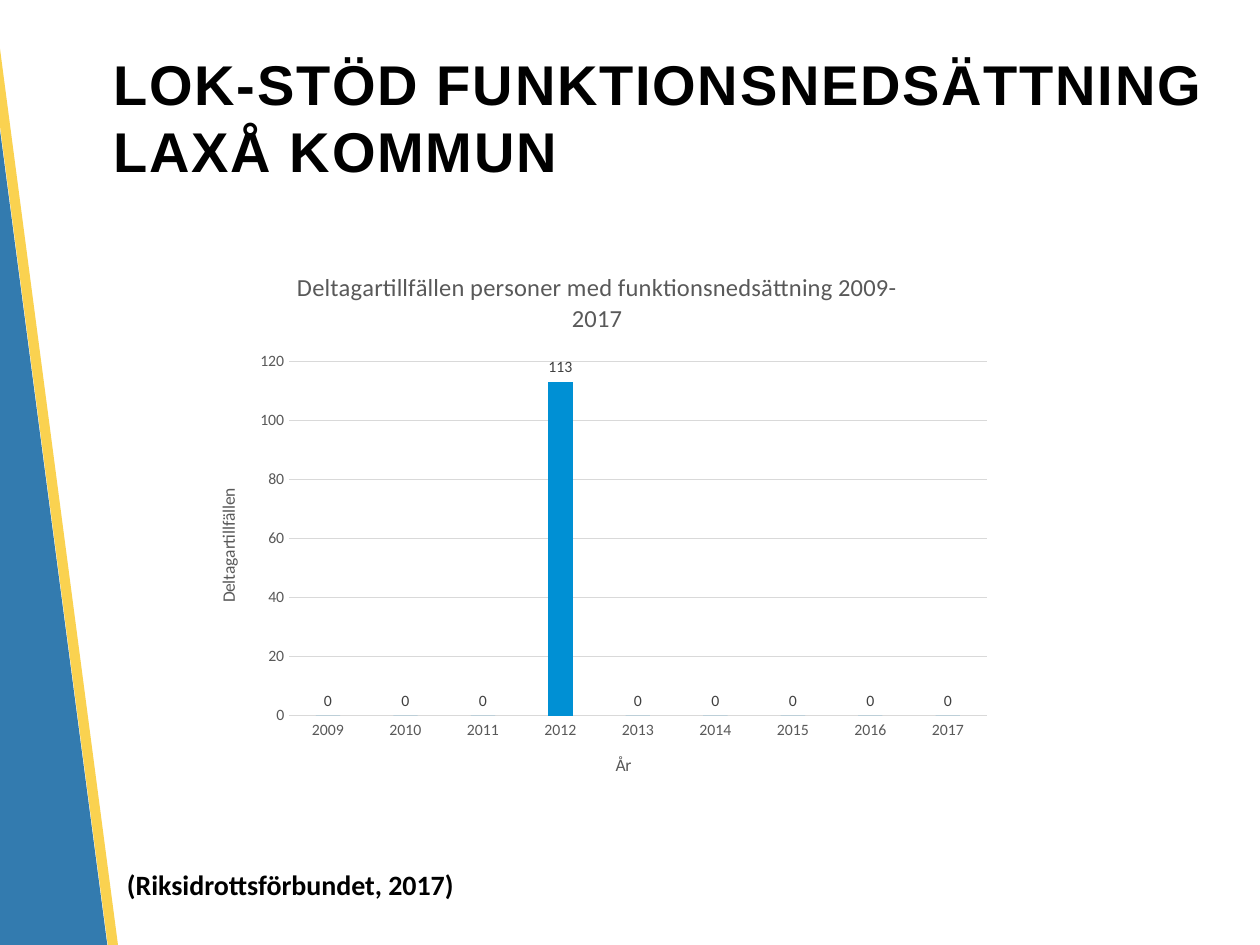
from dataclasses import dataclass

from lxml.etree import SubElement
from pptx import Presentation
from pptx.chart.data import CategoryChartData
from pptx.dml.color import RGBColor as Color
from pptx.enum.chart import XL_CHART_TYPE as ChartType
from pptx.enum.chart import XL_LABEL_POSITION as LabelPosition
from pptx.enum.chart import XL_TICK_MARK as TickMark
from pptx.enum.shapes import MSO_SHAPE as Shape
from pptx.enum.text import MSO_ANCHOR as Anchor
from pptx.enum.text import MSO_AUTO_SIZE as AutoSize
from pptx.enum.text import PP_ALIGN as Align
from pptx.oxml.ns import qn
from pptx.util import Pt


@dataclass(frozen=True)
class Theme:
    heading_font: str = "Arial"
    body_font: str = "Calibri"
    ink: str = "000000"
    muted: str = "595959"
    label: str = "404040"
    grid: str = "D9D9D9"
    bar: str = "0090D4"
    blue: str = "005B9C"
    yellow: str = "FAC828"
    title_size: int = 32
    source_size: int = 16
    chart_title_size: int = 14
    axis_title_size: int = 10
    tick_size: int = 9


class SlideBuilder:
    def __init__(self, page, theme):
        self.page = page
        self.theme = theme

    def style(self, font, size, color, bold=False, name=None):
        font.name = name or self.theme.body_font
        font.size = Pt(size)
        font.bold = bold
        font.color.rgb = Color.from_string(color)

    def band(self, left, top, width, height, color, opacity):
        band = self.page.shapes.add_shape(
            Shape.RECTANGLE, Pt(left), Pt(top), Pt(width), Pt(height))
        band.rotation = 352.5
        band.shadow.inherit = False
        band.line.fill.background()
        band.fill.solid()
        band.fill.fore_color.rgb = Color.from_string(color)
        tint = band.fill._xPr.find(".//" + qn("a:srgbClr"))
        SubElement(tint, qn("a:alpha"), val=str(opacity * 1000))

    def title(self, text, left, top, width, height):
        theme = self.theme
        box = self.page.shapes.title
        box.left, box.top, box.width, box.height = map(Pt, (left, top, width, height))
        frame = box.text_frame
        frame.word_wrap = True
        frame.auto_size = AutoSize.NONE
        frame.vertical_anchor = Anchor.MIDDLE
        para = frame.paragraphs[0]
        para.text = text
        para.alignment = Align.LEFT
        for span in para.runs:
            self.style(span.font, theme.title_size, theme.ink, True, theme.heading_font)
            span.font._element.set("spc", "100")
        for line_break in para._p.findall(qn("a:br")):
            SubElement(line_break, qn("a:rPr"), sz=str(theme.title_size * 100))

    def source(self, text, left, top, width, height):
        box = self.page.shapes.add_textbox(Pt(left), Pt(top), Pt(width), Pt(height))
        frame = box.text_frame
        frame.word_wrap = False
        frame.auto_size = AutoSize.SHAPE_TO_FIT_TEXT
        frame.text = text
        self.style(frame.paragraphs[0].runs[0].font,
                   self.theme.source_size, self.theme.ink, True)

    def caption(self, owner, text, size):
        para = owner.text_frame.paragraphs[0]
        para.text = text
        self.style(para.runs[0].font, size, self.theme.muted)

    def hairline(self, line):
        line.color.rgb = Color.from_string(self.theme.grid)
        line.width = Pt(0.75)

    def axis(self, axis, text):
        self.caption(axis.axis_title, text, self.theme.axis_title_size)
        axis.major_tick_mark = axis.minor_tick_mark = TickMark.NONE
        self.style(axis.tick_labels.font, self.theme.tick_size, self.theme.muted)

    def column_chart(self, heading, axis_names, years, values, left, top, width, height):
        theme = self.theme
        data = CategoryChartData()
        data.categories = years
        data.add_series("Series 1", values)
        chart = self.page.shapes.add_chart(
            ChartType.COLUMN_CLUSTERED, Pt(left), Pt(top), Pt(width), Pt(height), data).chart
        self.style(chart.font, theme.axis_title_size, theme.ink)
        chart.has_legend = False
        self.caption(chart.chart_title, heading, theme.chart_title_size)
        chart.chart_title.include_in_layout = False

        for axis, name in zip((chart.category_axis, chart.value_axis), axis_names):
            self.axis(axis, name)
        self.hairline(chart.category_axis.format.line)
        self.hairline(chart.value_axis.major_gridlines.format.line)
        chart.value_axis.format.line.fill.background()

        plot = chart.plots[0]
        plot.vary_by_categories = False
        plot.gap_width = 219
        plot.overlap = -27
        series = plot.series[0]
        series.format.fill.solid()
        series.format.fill.fore_color.rgb = Color.from_string(theme.bar)
        labels = series.data_labels
        labels.show_value = True
        labels.position = LabelPosition.OUTSIDE_END
        self.style(labels.font, theme.tick_size, theme.label)


def main():
    deck = Presentation()
    deck.slide_width, deck.slide_height = Pt(720), Pt(540)
    theme = Theme()
    builder = SlideBuilder(deck.slides.add_slide(deck.slide_layouts[5]), theme)
    builder.band(-37.4, -118, 65.5, 815.8, theme.blue, 80)
    builder.band(27.4, -127.4, 5.8, 815, theme.yellow, 81)
    builder.title("LOK-STÖD FUNKTIONSNEDSÄTTNING\nLAXÅ KOMMUN", 57.6, 21.6, 651, 90)
    builder.source("(Riksidrottsförbundet, 2017)", 65.5, 492.5, 204.5, 26.6)
    years = [str(year) for year in range(2009, 2018)]
    values = [113 if year == "2012" else 0 for year in years]
    builder.column_chart(
        "Deltagartillfällen personer med funktionsnedsättning 2009-2017",
        ("År", "Deltagartillfällen"), years, values, 109.4, 141.8, 463.7, 316)
    deck.save("out.pptx")


if __name__ == "__main__":
    main()
